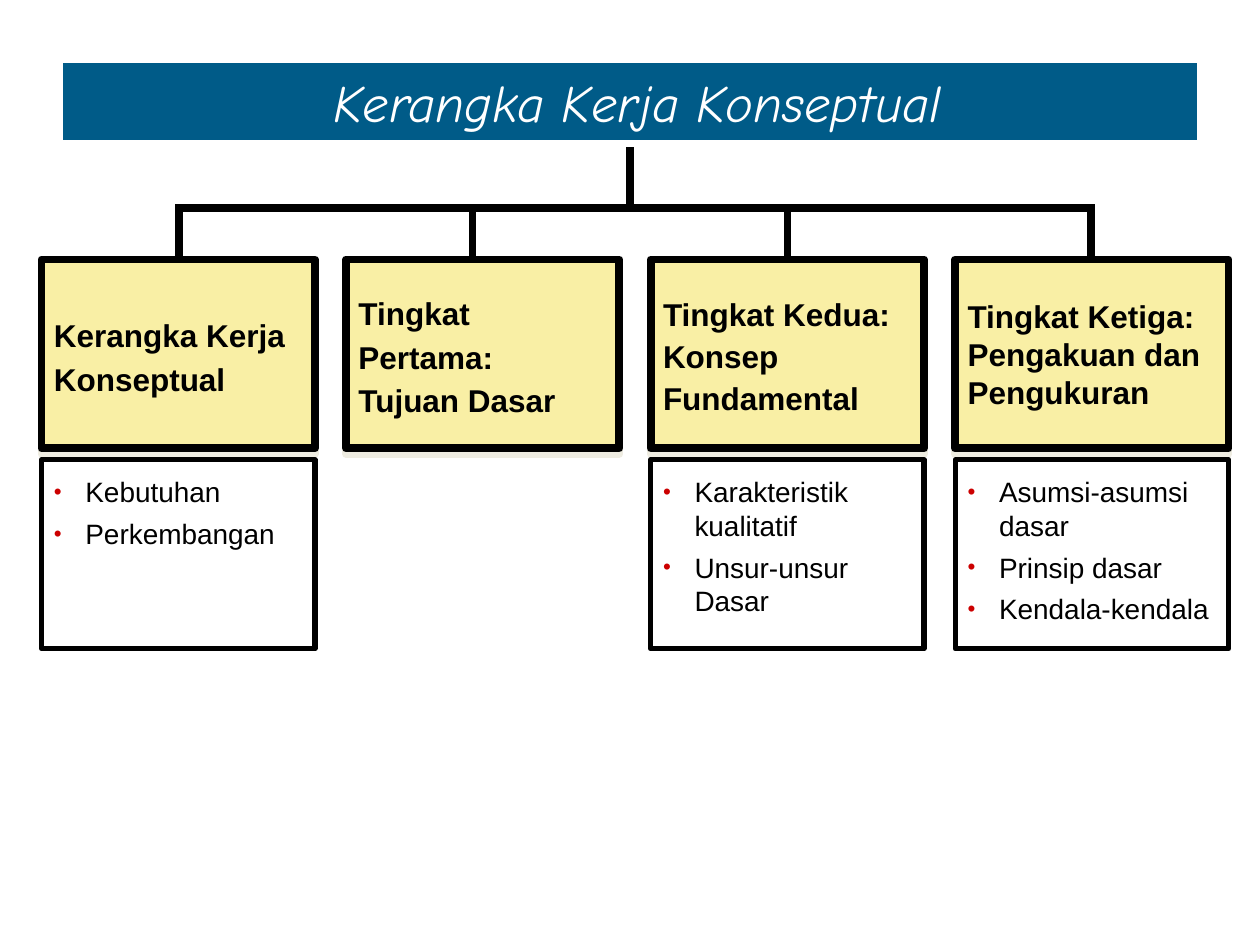
from dataclasses import dataclass

from lxml import etree
from pptx import Presentation
from pptx.dml.color import RGBColor
from pptx.enum.shapes import MSO_CONNECTOR, MSO_SHAPE
from pptx.enum.text import MSO_ANCHOR, MSO_AUTO_SIZE, PP_ALIGN
from pptx.oxml.ns import qn
from pptx.util import Inches, Pt

RECTANGLE = MSO_SHAPE.RECTANGLE
STRAIGHT = MSO_CONNECTOR.STRAIGHT
TOP, MIDDLE = MSO_ANCHOR.TOP, MSO_ANCHOR.MIDDLE
LEFT, CENTER = PP_ALIGN.LEFT, PP_ALIGN.CENTER
NO_AUTOFIT = MSO_AUTO_SIZE.NONE


@dataclass(frozen=True)
class Theme:
    banner: str = "005B88"
    banner_text: str = "FFFFFF"
    heading_fill: str = "F9EFA5"
    detail_fill: str = "FFFFFF"
    ink: str = "000000"
    bullet: str = "CC0000"
    shadow: str = "EEECE1"
    title_font: str = "Comic Neue"
    body_font: str = "Arial"
    title_size: int = 30
    heading_size: int = 18
    detail_size: int = 16
    thick: float = 4.5
    thin: float = 3


THEME = Theme()

# Column geometry, in inches
FIRST_LEFT, COLUMN_STEP = 0.33, 2.417
BOX_WIDTH, BOX_HEIGHT = 2.17, 1.5
HEADING_TOP, DETAIL_TOP = 2.06, 3.65
BAR_Y = 1.65

# Heading, line spacing, space before, branch position, details
COLUMNS = [
    ("Kerangka Kerja Konseptual", 1.15, 7, 1.42, ["Kebutuhan", "Perkembangan"]),
    ("Tingkat Pertama:\vTujuan Dasar", 1.15, 7, 3.75, []),
    ("Tingkat Kedua: Konsep Fundamental", 1.1, 7, 6.25,
     ["Karakteristik kualitatif", "Unsur-unsur Dasar"]),
    ("Tingkat Ketiga: Pengakuan dan Pengukuran", 1.0, 0, 8.66,
     ["Asumsi-asumsi dasar", "Prinsip dasar", "Kendala-kendala"]),
]


def color(value):
    return RGBColor.from_string(value)


def set_format(target, values):
    for name, value in values.items():
        setattr(target, name, value)


def style_text(paragraph, font_name, size, ink, **extra):
    set_format(paragraph.font, {"name": font_name, "size": Pt(size), **extra})
    paragraph.font.color.rgb = color(ink)


def add_title(slide, text):
    title = slide.shapes.title
    set_format(title, {"left": Inches(0.5), "top": Inches(0.5),
                       "width": Inches(9), "height": Inches(0.61)})
    title.fill.solid()
    title.fill.fore_color.rgb = color(THEME.banner)
    frame = title.text_frame
    frame.text = text
    set_format(frame, {"vertical_anchor": MIDDLE, "word_wrap": True,
                       "auto_size": NO_AUTOFIT})
    heading = frame.paragraphs[0]
    heading.alignment = CENTER
    properties = heading._p.get_or_add_pPr()
    properties.set("marL", str(Inches(0.12)))
    properties.set("indent", "0")
    style_text(heading, THEME.title_font, THEME.title_size, THEME.banner_text,
               italic=True, bold=False)


def add_line(slide, x1, y1, x2, y2):
    line = slide.shapes.add_connector(
        STRAIGHT, Inches(x1), Inches(y1), Inches(x2), Inches(y2))
    line.line.color.rgb = color(THEME.ink)
    line.line.width = Pt(THEME.thick)
    etree.SubElement(line._element.spPr, qn("a:effectLst"))


def add_box(slide, left, top, fill, border, anchor, top_inset):
    box = slide.shapes.add_shape(RECTANGLE, Inches(left), Inches(top),
                                 Inches(BOX_WIDTH), Inches(BOX_HEIGHT))
    box.shadow.inherit = False
    box.fill.solid()
    box.fill.fore_color.rgb = color(fill)
    box.line.color.rgb = color(THEME.ink)
    box.line.width = Pt(border)
    set_format(box.text_frame, {
        "word_wrap": True, "vertical_anchor": anchor,
        "margin_left": Inches(0.1), "margin_right": Inches(0.1),
        "margin_top": Inches(top_inset), "margin_bottom": Inches(0.05)})
    return box


def add_drop_shadow(box):
    effects = box._element.spPr.find(qn("a:effectLst"))
    shadow = etree.SubElement(effects, qn("a:outerShdw"), dist=str(Pt(3)),
                              dir="5400000", algn="ctr", rotWithShape="0")
    etree.SubElement(shadow, qn("a:srgbClr"), val=THEME.shadow)


def add_heading(slide, left, text, line_spacing, space_before):
    box = add_box(slide, left, HEADING_TOP, THEME.heading_fill, THEME.thick,
                  MIDDLE, 0.05)
    add_drop_shadow(box)
    box.text_frame.text = text
    paragraph = box.text_frame.paragraphs[0]
    set_format(paragraph, {"alignment": LEFT, "line_spacing": line_spacing,
                           "space_before": Pt(space_before)})
    style_text(paragraph, THEME.body_font, THEME.heading_size, THEME.ink, bold=True)


def add_bullet(paragraph):
    properties = paragraph._p.get_or_add_pPr()
    properties.set("marL", str(Inches(0.25)))
    properties.set("indent", str(-Inches(0.25)))
    bullet_color = etree.Element(qn("a:buClr"))
    etree.SubElement(bullet_color, qn("a:srgbClr"), val=THEME.bullet)
    size = etree.Element(qn("a:buSzPct"), val="80000")
    font = etree.Element(qn("a:buFont"), typeface=THEME.body_font)
    character = etree.Element(qn("a:buChar"), char="•")
    # Bullet settings come after spacing and before the default run format
    place = len(properties.findall(qn("a:spcBef")))
    for offset, part in enumerate((bullet_color, size, font, character)):
        properties.insert(place + offset, part)


def add_details(slide, left, items):
    box = add_box(slide, left, DETAIL_TOP, THEME.detail_fill, THEME.thin, TOP, 0.12)
    box.text_frame.text = "\n".join(items)
    for paragraph in box.text_frame.paragraphs:
        set_format(paragraph, {"alignment": LEFT, "space_before": Pt(4.6)})
        style_text(paragraph, THEME.body_font, THEME.detail_size, THEME.ink)
        add_bullet(paragraph)


def main():
    deck = Presentation()
    deck.slide_width, deck.slide_height = Inches(10), Inches(7.5)
    slide = deck.slides.add_slide(deck.slide_layouts[5])
    add_title(slide, "Kerangka Kerja Konseptual")

    # Trunk and crossbar
    add_line(slide, 5, 1.17, 5, BAR_Y)
    add_line(slide, 1.39, BAR_Y, 8.69, BAR_Y)

    # One branch per column
    for index, (heading, spacing, before, branch_x, items) in enumerate(COLUMNS):
        left = FIRST_LEFT + index * COLUMN_STEP
        add_line(slide, branch_x, BAR_Y, branch_x, HEADING_TOP)
        add_heading(slide, left, heading, spacing, before)
        if items:
            add_details(slide, left, items)

    deck.save("out.pptx")


if __name__ == "__main__":
    main()
